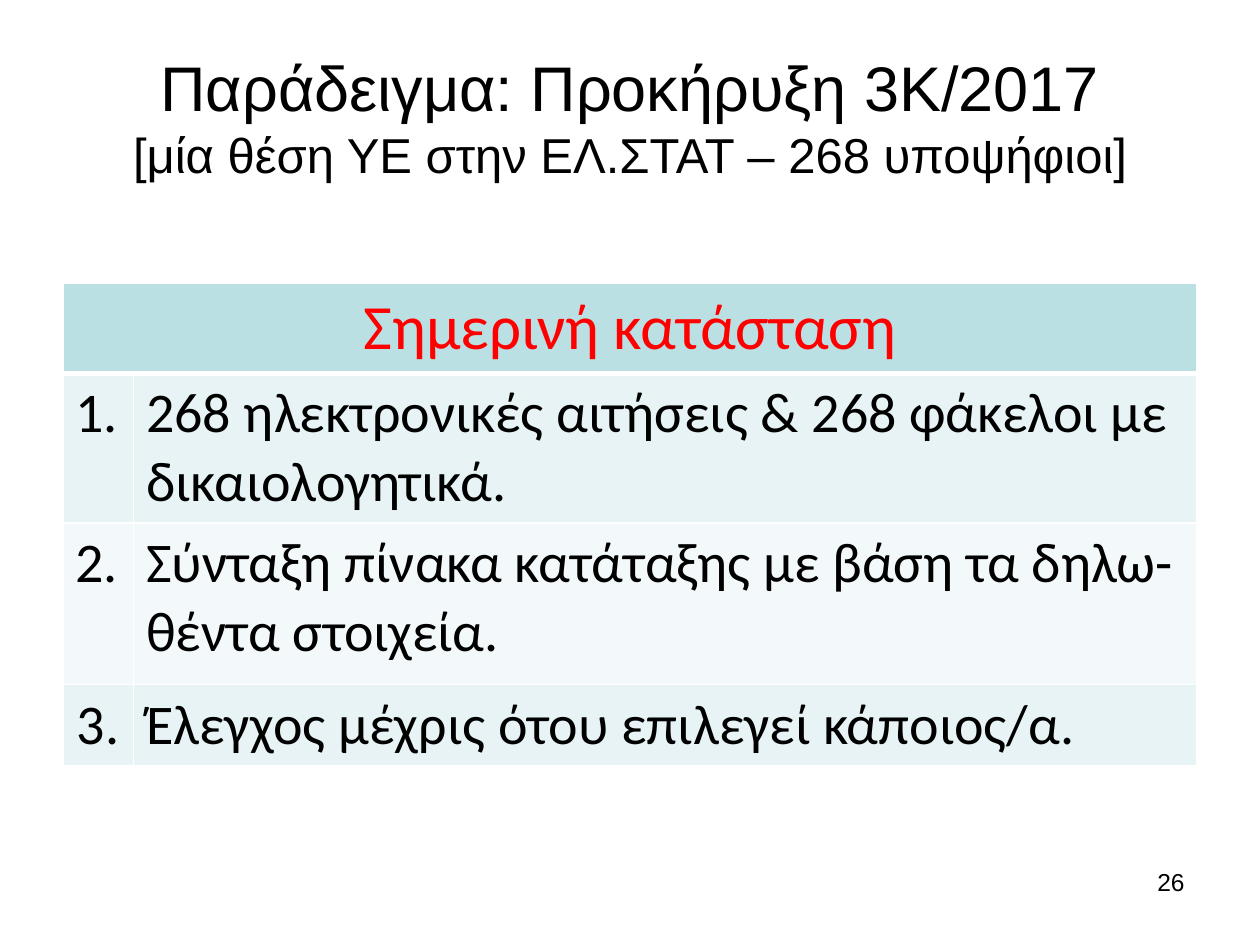
import pptx
import pptx.dml.color
import pptx.enum.text
import pptx.util
from lxml import etree
from pptx.util import Inches

COLORS = {
    "text": "000000",
    "heading": "FF0000",
    "header_fill": "BBE0E3",
    "odd_fill": "E7F3F4",
    "even_fill": "F3F9FA",
    "border": "FFFFFF",
}
ALIGN = pptx.enum.text.PP_ALIGN
DRAWING = "{http://schemas.openxmlformats.org/drawingml/2006/main}"


def format_paragraph(para, sizes, font, color, align):
    """Format the paragraph, taking one size in points for each run."""
    para.alignment = align
    for span, size in zip(para.runs, sizes):
        span.font.size = pptx.util.Pt(size)
        span.font.name = font
        span.font.bold = False
        span.font.color.rgb = pptx.dml.color.RGBColor.from_string(COLORS[color])


def style_cell(cell, fill, bottom_width):
    """Draw the cell's borders, then its fill."""
    properties = cell._tc.get_or_add_tcPr()
    for side in "LRTB":
        width = bottom_width if side == "B" else 1
        line = etree.SubElement(properties, f"{DRAWING}ln{side}", w=str(pptx.util.Pt(width)))
        solid = etree.SubElement(line, f"{DRAWING}solidFill")
        etree.SubElement(solid, f"{DRAWING}srgbClr", val=COLORS["border"])
    cell.fill.solid()
    cell.fill.fore_color.rgb = pptx.dml.color.RGBColor.from_string(COLORS[fill])


deck = pptx.Presentation()
deck.slide_width, deck.slide_height = Inches(10), Inches(7.5)
page = deck.slides.add_slide(deck.slide_layouts[5])

# Title
title = page.shapes.title
title.left, title.top = Inches(0.5), Inches(0.3)
title.width, title.height = Inches(9), Inches(1.24)
frame = title.text_frame
frame.text = "Παράδειγμα: Προκήρυξη 3Κ/2017\v[μία θέση ΥΕ στην ΕΛ.ΣΤΑΤ – 268 υποψήφιοι]"
frame.auto_size = pptx.enum.text.MSO_AUTO_SIZE.NONE
frame.vertical_anchor = pptx.enum.text.MSO_ANCHOR.MIDDLE
format_paragraph(frame.paragraphs[0], [36, 28], "Arial", "text", ALIGN.CENTER)

# Table of steps under a merged heading
steps = [
    ("1.", "268 ηλεκτρονικές αιτήσεις & 268 φάκελοι με δικαιολογητικά."),
    ("2.", "Σύνταξη πίνακα κατάταξης με βάση τα δηλω-θέντα στοιχεία."),
    ("3.", "Έλεγχος μέχρις ότου επιλεγεί κάποιος/α."),
]
table = page.shapes.add_table(
    len(steps) + 1, 2, Inches(0.5), Inches(2.25), Inches(9), Inches(3.78)
).table
for column, width in zip(table.columns, [0.56, 8.44]):
    column.width = Inches(width)
for row, height in zip(table.rows, [0.7, 1.19, 1.28, 0.64]):
    row.height = Inches(height)

heading = table.cell(0, 0)
heading.merge(table.cell(0, 1))
heading.text_frame.text = "Σημερινή κατάσταση"
format_paragraph(heading.text_frame.paragraphs[0], [36], "Calibri", "heading", ALIGN.CENTER)
for cell in table.rows[0].cells:
    style_cell(cell, "header_fill", 3)

for number, step in enumerate(steps, start=1):
    for column, text in enumerate(step):
        cell = table.cell(number, column)
        cell.text_frame.text = text
        centered = column == 0 and number == len(steps)
        format_paragraph(cell.text_frame.paragraphs[0], [32], "Calibri", "text",
                         ALIGN.CENTER if centered else ALIGN.LEFT)
        style_cell(cell, "odd_fill" if number % 2 else "even_fill", 1)

# Page number
page_number = page.shapes.add_textbox(Inches(7.17), Inches(6.83), Inches(2.33), Inches(0.52))
page_number.text_frame.word_wrap = True
page_number.text_frame.text = "26"
format_paragraph(page_number.text_frame.paragraphs[0], [14], "Arial", "text", ALIGN.RIGHT)

deck.save("out.pptx")
